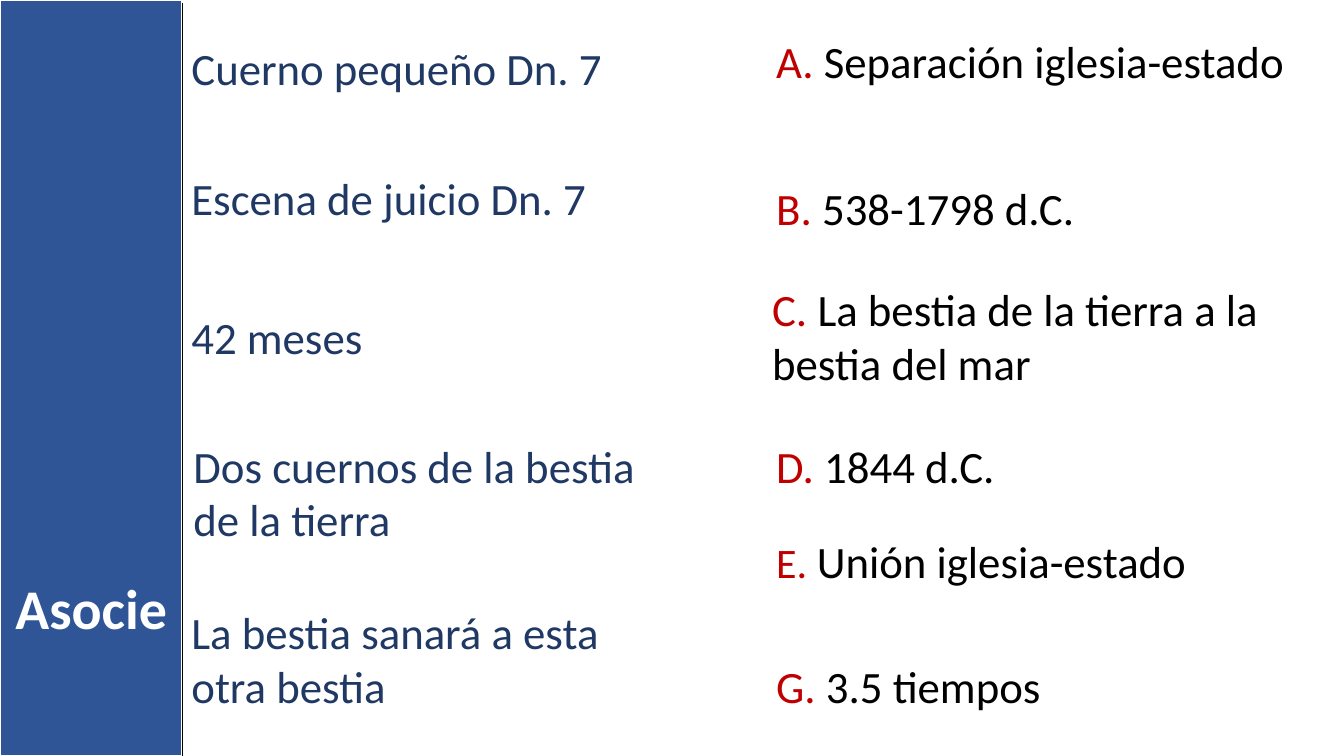
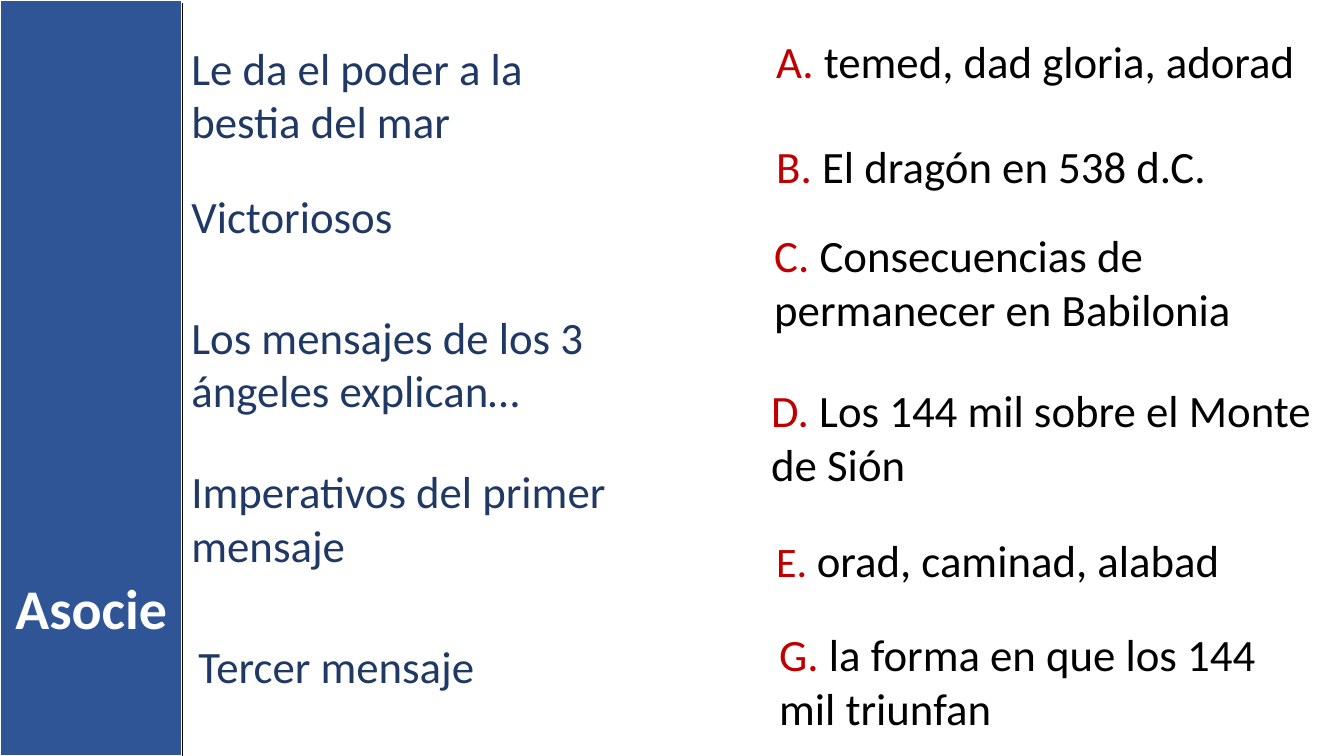
import pptx
import pptx.util
import pptx.dml.color
import pptx.enum.shapes
import pptx.enum.text
import lxml.etree

EMU_PER_PX = 9144  # 100 px to the inch
SLIDE_WIDTH, SLIDE_HEIGHT = 1333, 750
BAND_WIDTH = 181
LINE_HEIGHT, BOX_PADDING = 54, 10
FONT = "Calibri"
TITLE = "Asocie"
TITLE_TOP, TITLE_HEIGHT = 564, 77
RULE_TOP = 3

COLORS = {
    "band": "2F5597",
    "band_edge": "FFFFFF",
    "rule": "000000",
}
TITLE_FORMAT = {"size": 40, "color": "FFFFFF", "bold": True}
PROMPT_FORMAT = {"size": 32, "color": "203864"}
LETTER_FORMAT = {"size": 32, "color": "C00000"}
LETTER_SIZES = {"E": 30}
ANSWER_FORMAT = {"size": 32, "color": "000000"}

# Prompts: text, left, top, width, lines
# Answers: letter, text, left, top, width, lines
EXERCISES = [
    {
        "prompts": [
            ("Cuerno pequeño Dn. 7", 180, 35, 457, 1),
            ("Escena de juicio Dn. 7", 180, 164, 536, 1),
            ("42 meses", 180, 302, 516, 1),
            ("Dos cuernos de la bestia de la tierra", 182, 430, 501, 2),
            ("La bestia sanará a esta otra bestia", 180, 595, 441, 2),
        ],
        "answers": [
            ("A", "Separación iglesia-estado", 760, 29, 558, 1),
            ("B", "538-1798 d.C.", 760, 174, 549, 1),
            ("C", "La bestia de la tierra a la bestia del mar", 756, 275, 527, 2),
            ("D", "1844 d.C.", 760, 430, 558, 1),
            ("E", "Unión iglesia-estado", 760, 525, 549, 1),
            ("G", "3.5 tiempos", 760, 649, 520, 1),
        ],
    },
    {
        "prompts": [
            ("Le da el poder a la bestia del mar", 180, 35, 457, 2),
            ("Victoriosos", 180, 182, 536, 1),
            ("Los mensajes de los 3 ángeles explican…", 180, 302, 516, 2),
            ("Imperativos del primer mensaje", 180, 455, 501, 2),
            ("Tercer mensaje", 187, 629, 441, 1),
        ],
        "answers": [
            ("A", "temed, dad gloria, adorad", 760, 29, 558, 1),
            ("B", "El dragón en 538 d.C.", 760, 133, 549, 1),
            ("C", "Consecuencias de permanecer en Babilonia", 758, 221, 552, 2),
            ("D", "Los 144 mil sobre el Monte de Sión", 755, 375, 558, 2),
            ("E", "orad, caminad, alabad", 760, 524, 549, 1),
            ("G", "la forma en que los 144 mil triunfan", 763, 617, 520, 2),
        ],
    },
]


def px(*lengths):
    return [pptx.util.Emu(length * EMU_PER_PX) for length in lengths]


def rgb(color):
    return pptx.dml.color.RGBColor.from_string(color)


def format_run(run, size, color, bold=False):
    values = {"name": FONT, "size": pptx.util.Pt(size), "bold": bold}
    for name, value in values.items():
        setattr(run.font, name, value)
    run.font.color.rgb = rgb(color)


def add_text(slide, box, runs, alignment=pptx.enum.text.PP_ALIGN.LEFT):
    """Add a one-paragraph text box; runs are (text, format) pairs."""
    frame = slide.shapes.add_textbox(*px(*box)).text_frame
    frame.word_wrap = True
    frame.auto_size = pptx.enum.text.MSO_AUTO_SIZE.SHAPE_TO_FIT_TEXT
    paragraph = frame.paragraphs[0]
    paragraph.alignment = alignment
    for text, values in runs:
        run = paragraph.add_run()
        run.text = text
        format_run(run, **values)


def add_entry(slide, left, top, width, lines, runs):
    height = lines * LINE_HEIGHT + BOX_PADDING
    add_text(slide, (left, top, width, height), runs)


def add_band(slide):
    band = slide.shapes.add_shape(
        pptx.enum.shapes.MSO_SHAPE.RECTANGLE, *px(0, 0, BAND_WIDTH, SLIDE_HEIGHT))
    band.shadow.inherit = False
    band.fill.solid()
    band.fill.fore_color.rgb = rgb(COLORS["band"])
    band.line.color.rgb = rgb(COLORS["band_edge"])
    band.line.width = pptx.util.Pt(1.5)
    add_text(slide, (0, TITLE_TOP, BAND_WIDTH, TITLE_HEIGHT),
             [(TITLE, TITLE_FORMAT)], pptx.enum.text.PP_ALIGN.CENTER)


def add_rule(slide):
    """Draw the vertical line along the right edge of the band."""
    rule = slide.shapes.add_connector(
        pptx.enum.shapes.MSO_CONNECTOR.STRAIGHT,
        *px(BAND_WIDTH, RULE_TOP, BAND_WIDTH, SLIDE_HEIGHT))
    rule.line.color.rgb = rgb(COLORS["rule"])
    rule.line.width = pptx.util.Pt(1)
    properties = rule._element.spPr
    lxml.etree.SubElement(properties, pptx.oxml.ns.qn("a:effectLst"))


def build_slide(presentation, exercise):
    slide = presentation.slides.add_slide(presentation.slide_layouts[6])
    add_band(slide)
    for text, *place in exercise["prompts"]:
        add_entry(slide, *place, [(text, PROMPT_FORMAT)])
    for letter, text, *place in exercise["answers"]:
        size = LETTER_SIZES.get(letter, LETTER_FORMAT["size"])
        letter_format = {**LETTER_FORMAT, "size": size}
        add_entry(slide, *place,
                  [(f"{letter}. ", letter_format), (text, ANSWER_FORMAT)])
    add_rule(slide)


def main():
    presentation = pptx.Presentation()
    presentation.slide_width, presentation.slide_height = px(SLIDE_WIDTH, SLIDE_HEIGHT)
    for exercise in EXERCISES:
        build_slide(presentation, exercise)
    presentation.save("out.pptx")


if __name__ == "__main__":
    main()
